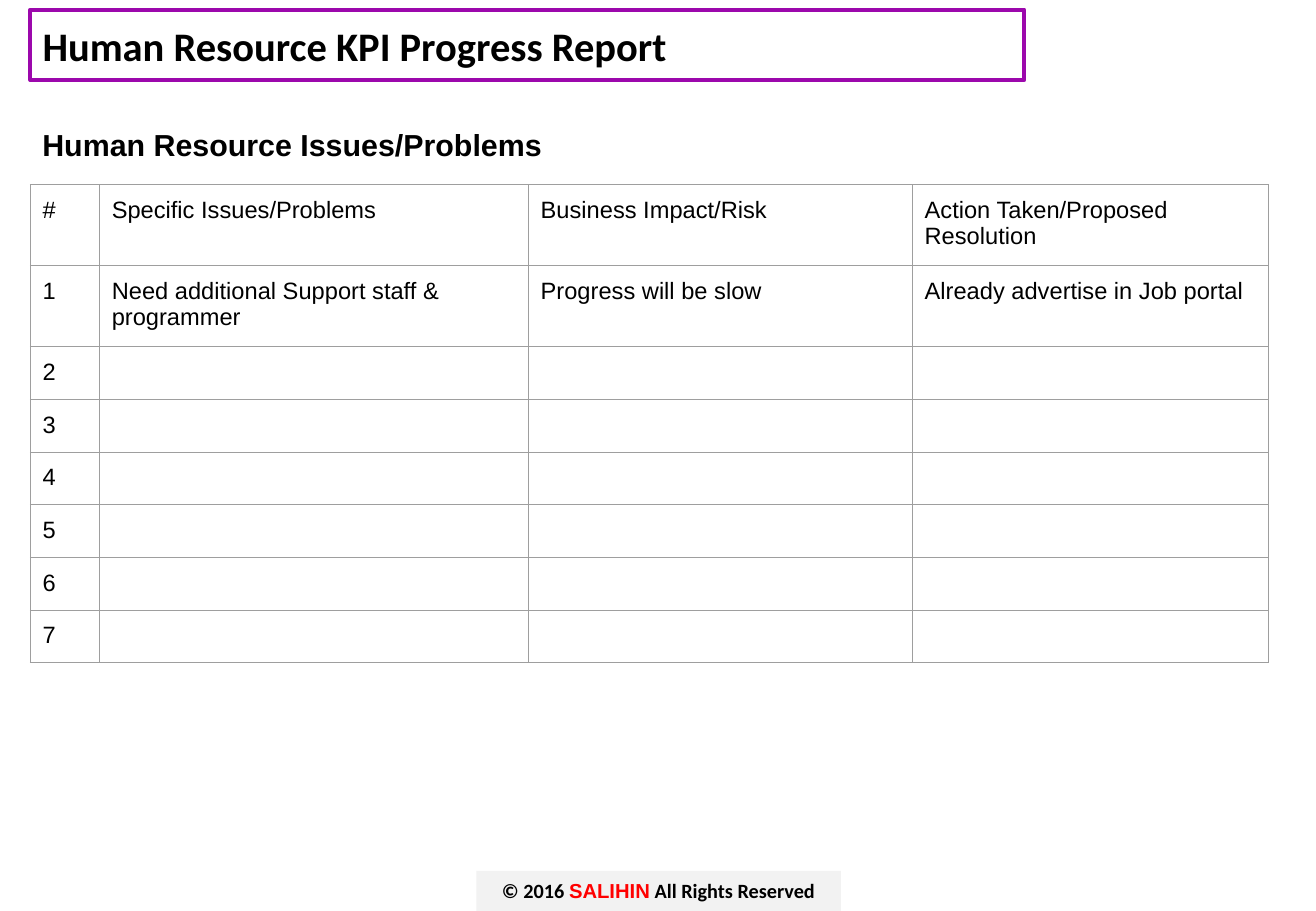
"""Build the human resource KPI progress report slide."""
from lxml import etree
from pptx import Presentation
from pptx.dml.color import RGBColor
from pptx.enum.shapes import MSO_SHAPE
from pptx.enum.text import MSO_ANCHOR, MSO_AUTO_SIZE, PP_ALIGN
from pptx.oxml.ns import qn
from pptx.util import Pt

PX = 9144
RECTANGLE = MSO_SHAPE.RECTANGLE
MIDDLE = MSO_ANCHOR.MIDDLE
NO_AUTOFIT = MSO_AUTO_SIZE.NONE
LEFT, CENTER = PP_ALIGN.LEFT, PP_ALIGN.CENTER
TITLE_ONLY = 5

BLACK = RGBColor(0x00, 0x00, 0x00)
RED = RGBColor(0xFF, 0x00, 0x00)
PURPLE = RGBColor(0x9C, 0x08, 0xAC)
PALE_GREY = RGBColor(0xF2, 0xF2, 0xF2)
BORDER_GREY = RGBColor(0x9E, 0x9E, 0x9E)

COLUMN_WIDTHS = [57, 353, 316, 293]
ROW_HEIGHTS = [63, 63] + [42] * 6
ISSUE_ROWS = [
    ["#", "Specific Issues/Problems", "Business Impact/Risk",
     "Action Taken/Proposed Resolution"],
    ["1", "Need additional Support staff & programmer",
     "Progress will be slow", "Already advertise in Job portal"],
] + [[str(number), "", "", ""] for number in range(2, 8)]
COPYRIGHT_RUNS = [
    ("© 2016 ", "Calibri", BLACK),
    ("SALIHIN", "Arial", RED),
    (" All Rights Reserved", "Calibri", BLACK),
]


def scale(*lengths):
    return [length * PX for length in lengths]


def format_font(font, name, size, color=BLACK, bold=False):
    font.name = name
    font.size = Pt(size)
    font.color.rgb = color
    font.bold = bold


def set_margins(target, side, edge):
    target.margin_left = target.margin_right = side * PX
    target.margin_top = target.margin_bottom = edge * PX


def format_title(title, text):
    title.left, title.top, title.width, title.height = scale(25, 8, 818, 58)
    title.line.color.rgb = PURPLE
    title.line.width = Pt(2.25)
    frame = title.text_frame
    frame.text = text
    frame.auto_size = NO_AUTOFIT
    frame.vertical_anchor = MIDDLE
    set_margins(frame, 10, 5)
    paragraph = frame.paragraphs[0]
    paragraph.alignment = LEFT
    format_font(paragraph.runs[0].font, "Calibri", 24, bold=True)


def add_subtitle(slide, text):
    frame = slide.shapes.add_textbox(*scale(25, 94, 961, 47)).text_frame
    frame.word_wrap = True
    set_margins(frame, 10, 10)
    frame.text = text
    format_font(frame.paragraphs[0].runs[0].font, "Arial", 18, bold=True)


def add_copyright(slide):
    shape = slide.shapes.add_shape(RECTANGLE, *scale(392, 717, 300, 33))
    shape.shadow.inherit = False
    shape.fill.solid()
    shape.fill.fore_color.rgb = PALE_GREY
    shape.line.fill.background()
    shape.text_frame.vertical_anchor = MIDDLE
    paragraph = shape.text_frame.paragraphs[0]
    paragraph.alignment = CENTER
    for text, font_name, color in COPYRIGHT_RUNS:
        run = paragraph.add_run()
        run.text = text
        format_font(run.font, font_name, 12, color, bold=True)


def add_borders(cell):
    properties = cell._tc.get_or_add_tcPr()
    for side in ("a:lnL", "a:lnR", "a:lnT", "a:lnB"):
        line = etree.SubElement(properties, qn(side), w=str(Pt(0.75)))
        fill = etree.SubElement(line, qn("a:solidFill"))
        etree.SubElement(fill, qn("a:srgbClr"), val=str(BORDER_GREY))


def format_cell(cell, text):
    add_borders(cell)
    cell.fill.background()
    if text:
        set_margins(cell, 10, 10)
        cell.text_frame.text = text
        format_font(cell.text_frame.paragraphs[0].runs[0].font, "Arial", 14)


def add_issue_table(slide):
    frame = slide.shapes.add_table(
        len(ROW_HEIGHTS), len(COLUMN_WIDTHS),
        *scale(25, 152, sum(COLUMN_WIDTHS), sum(ROW_HEIGHTS)))
    table = frame.table
    table.first_row = False
    table.horz_banding = False
    for column, width in zip(table.columns, COLUMN_WIDTHS):
        column.width = width * PX
    for row, height, texts in zip(table.rows, ROW_HEIGHTS, ISSUE_ROWS):
        row.height = height * PX
        for cell, text in zip(row.cells, texts):
            format_cell(cell, text)


def main():
    presentation = Presentation()
    presentation.slide_width, presentation.slide_height = scale(1083, 750)
    layout = presentation.slide_layouts[TITLE_ONLY]
    slide = presentation.slides.add_slide(layout)
    format_title(slide.shapes.title, "Human Resource KPI Progress Report")
    add_subtitle(slide, "Human Resource Issues/Problems")
    add_issue_table(slide)
    add_copyright(slide)
    presentation.save("out.pptx")


if __name__ == "__main__":
    main()
